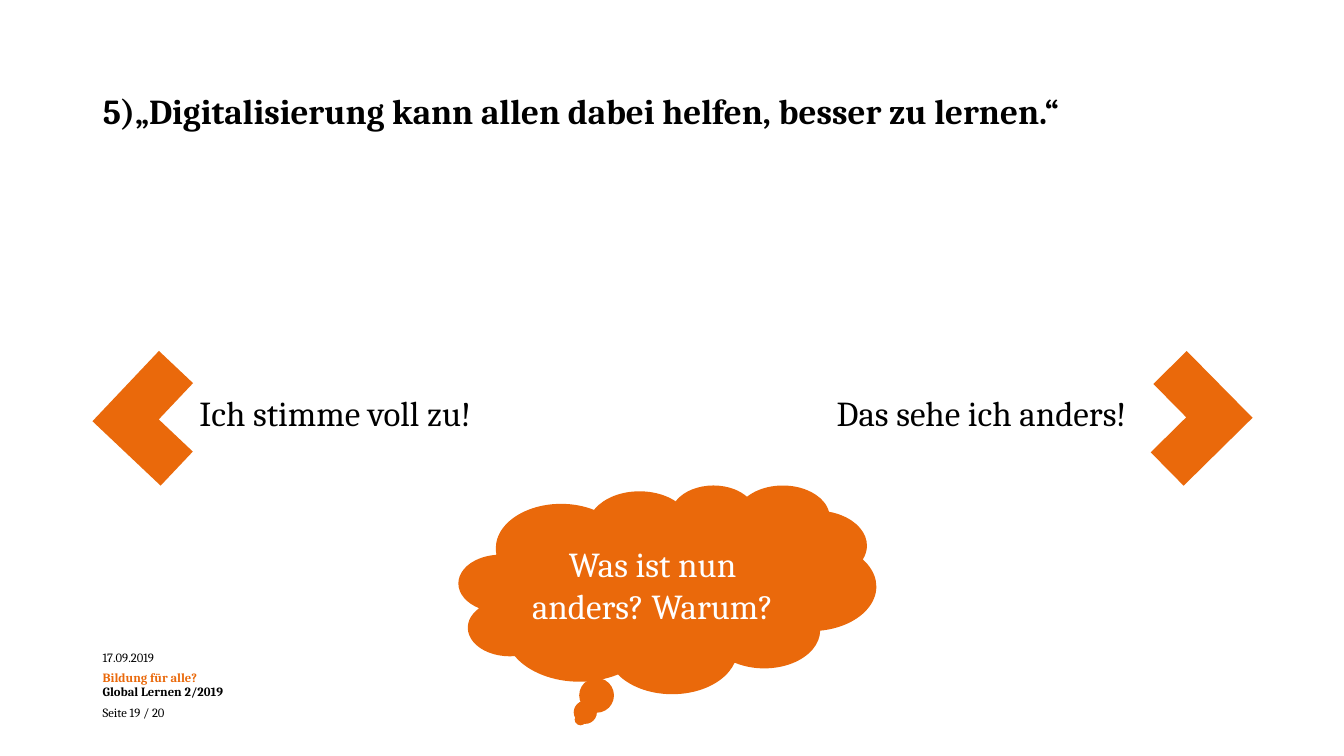
from pptx import Presentation
from pptx.dml.color import RGBColor
from pptx.enum import shapes, text
from pptx.util import Inches, Pt

ORANGE = RGBColor(0xEA, 0x69, 0x0B)
BLACK = RGBColor(0, 0, 0)
WHITE = RGBColor(0xFF, 0xFF, 0xFF)
FONT = "Cambria"


def place(item, left, top, width, height):
    """Move and size a shape, in inches."""
    item.left, item.top = Inches(left), Inches(top)
    item.width, item.height = Inches(width), Inches(height)


def write(para, words, size=25, color=BLACK, bold=False):
    """Fill a paragraph with one formatted run."""
    para.text = words
    for span in para.runs:
        span.font.name = FONT
        span.font.size = Pt(size)
        span.font.bold = bold
        span.font.color.rgb = color


def add_title(page, words):
    """Set the slide title."""
    title = page.shapes.title
    place(title, 0.92, 0.4, 11.5, 1.45)
    frame = title.text_frame
    frame.word_wrap = True
    frame.auto_size = text.MSO_AUTO_SIZE.NONE
    frame.vertical_anchor = text.MSO_ANCHOR.MIDDLE
    para = frame.paragraphs[0]
    write(para, words, bold=True)
    para.alignment = text.PP_ALIGN.LEFT
    para.line_spacing = 0.9


def add_box(page, left, top, width, height):
    """Add a wrapping text box and return its frame."""
    box = page.shapes.add_textbox(Inches(left), Inches(top), Inches(width), Inches(height))
    box.text_frame.word_wrap = True
    return box.text_frame


def add_statement(page, left, words):
    """Add one of the two opposing answers."""
    para = add_box(page, left, 3.81, 4.21, 1.3).paragraphs[0]
    write(para, words)
    para.line_spacing = 1.07


def add_solid(page, kind, left, top, width, height):
    """Add a flat orange shape without outline."""
    solid = page.shapes.add_shape(kind, Inches(left), Inches(top), Inches(width), Inches(height))
    solid.shadow.inherit = False
    solid.fill.solid()
    solid.fill.fore_color.rgb = ORANGE
    solid.line.fill.background()
    return solid


def add_arrow(page, left, rotation):
    """Add a corner turned into a pointing chevron."""
    arrow = add_solid(page, shapes.MSO_SHAPE.CORNER, left, 3.67, 0.93, 0.96)
    arrow.rotation = rotation


def add_thought(page, words):
    """Add the thought bubble with its question."""
    cloud = add_solid(page, shapes.MSO_SHAPE.CLOUD_CALLOUT, 4.55, 4.81, 4.14, 2.07)
    frame = cloud.text_frame
    frame.word_wrap = True
    frame.vertical_anchor = text.MSO_ANCHOR.MIDDLE
    para = frame.paragraphs[0]
    write(para, words, color=WHITE)
    para.alignment = text.PP_ALIGN.CENTER


def add_imprint(page):
    """Add the date, series and page lines at the lower left."""
    lines = [
        ("17.09.2019", BLACK, False, 4.5),
        ("Bildung für alle?", ORANGE, True, 0),
        ("Global Lernen 2/2019", BLACK, True, 4.5),
        ("Seite 19 / 20", BLACK, False, 0),
    ]
    frame = add_box(page, 0.92, 6.41, 2.6, 0.81)
    for index, (words, color, bold, gap) in enumerate(lines):
        para = frame.add_paragraph() if index else frame.paragraphs[0]
        write(para, words, 9, color, bold)
        para.line_spacing = Pt(10)
        para.space_after = Pt(gap)


def main():
    """Build and save the slide."""
    deck = Presentation()
    deck.slide_width, deck.slide_height = Inches(13.33), Inches(7.5)
    page = deck.slides.add_slide(deck.slide_layouts[5])
    add_imprint(page)
    add_title(page, "5)„Digitalisierung kann allen dabei helfen, besser zu lernen.“")
    add_arrow(page, 1.12, 43.4)
    add_arrow(page, 11.29, 225.4)
    add_statement(page, 1.88, "Ich stimme voll zu!")
    add_statement(page, 8.2, "Das sehe ich anders!")
    add_thought(page, "Was ist nun anders? Warum?")
    deck.save("out.pptx")


if __name__ == "__main__":
    main()
